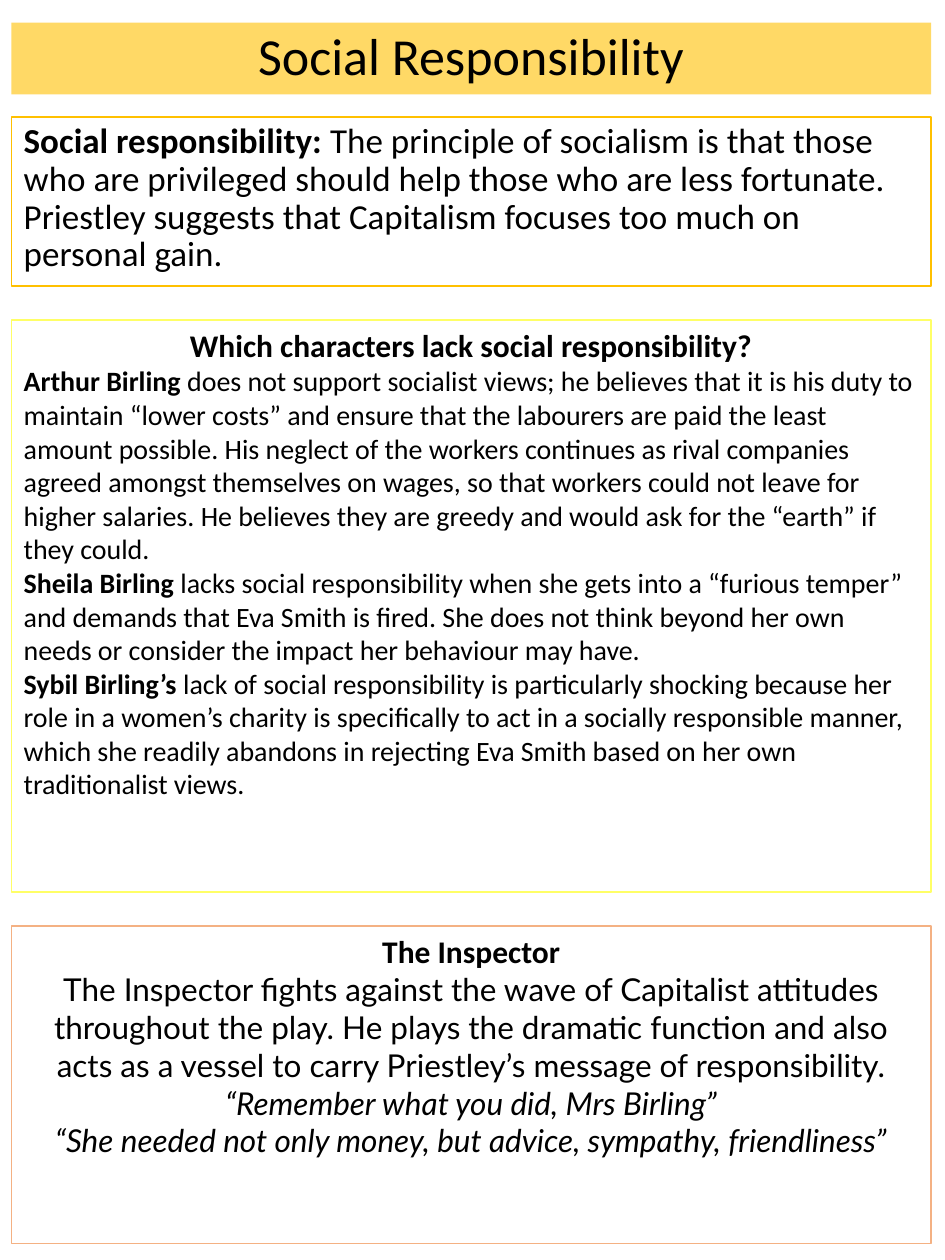
import pptx
import pptx.util
import pptx.dml.color
import pptx.enum.text

Inches, Pt = pptx.util.Inches, pptx.util.Pt
RGB = pptx.dml.color.RGBColor.from_string
Align = pptx.enum.text.PP_ALIGN
Anchor = pptx.enum.text.MSO_ANCHOR

THEME = {
    "ink": "000000", "band": "FFD966", "font": "Calibri", "alt": "Lato",
    "title": 29.7, "lead": 20, "head": 18, "text": 16, "edge": 0.75,
}
LEFT, WIDE = 0.09, 7.3

TITLE = [("mid", "title", "font", [("Social Responsibility", "")])]

LEAD = [("left", "lead", "font", [
    ("Social responsibility: ", "b"),
    ("The principle of socialism is that those who are privileged should help those who are "
     "less fortunate. Priestley suggests that Capitalism focuses too much on personal gain.", ""),
])]

ROLES = [
    ("mid", "head", "font", [("Which characters lack social responsibility?", "b")]),
    ("left", "text", "font", [
        ("Arthur Birling ", "b"),
        ("does not support socialist views; he believes that it is his duty to maintain “lower "
         "costs” and ensure that the labourers are paid the least amount possible. His neglect "
         "of the workers continues as rival companies agreed amongst themselves on wages, so "
         "that workers could not leave for higher salaries. He believes they are greedy and "
         "would ask for the “earth” if they could.", ""),
    ]),
    ("left", "text", "font", [
        ("Sheila Birling", "b"),
        (" lacks social responsibility when she gets into a “furious temper” and demands that "
         "Eva Smith is fired. She does not think beyond her own needs or consider the impact "
         "her behaviour may have.", ""),
    ]),
    ("left", "text", "font", [
        ("Sybil Birling’s ", "b"),
        ("lack of social responsibility is particularly shocking because her role in a women’s "
         "charity is specifically to act in a socially responsible manner, which she readily "
         "abandons in rejecting Eva Smith based on her own traditionalist views.", ""),
    ]),
]

GUIDE = [
    ("mid", "head", "font", [("The Inspector", "b")]),
    ("mid", "head", "alt", [
        ("The Inspector fights against the wave of Capitalist attitudes throughout the play. He "
         "plays the dramatic function and also acts as a vessel to carry Priestley’s message of "
         "responsibility.", ""),
    ]),
    ("mid", "head", "alt", [("“Remember what you did, Mrs Birling”", "i")]),
    ("mid", "head", "alt", [
        ("“She needed not only money, but advice, sympathy, friendliness”", "i"),
    ]),
]

BOXES = [
    (0.93, 1.34, "FFC000", 0.9, 7.5, LEAD),
    (2.54, 4.54, "FFFF66", 1, 0, ROLES),
    (7.35, 2.52, "F4B183", 1, 0, GUIDE),
]


def place(shape, top, high):
    shape.left, shape.top = Inches(LEFT), Inches(top)
    shape.width, shape.height = Inches(WIDE), Inches(high)


def write(shape, paras, space, before, anchor):
    frame = shape.text_frame
    frame.word_wrap = True
    frame.auto_size = pptx.enum.text.MSO_AUTO_SIZE.NONE
    frame.vertical_anchor = anchor
    for num, (side, size, face, runs) in enumerate(paras):
        para = frame.add_paragraph() if num else frame.paragraphs[0]
        para.alignment = Align.CENTER if side == "mid" else Align.LEFT
        para.line_spacing = space
        para.space_before = Pt(before)
        for text, style in runs:
            run = para.add_run()
            run.text = text
            font = run.font
            font.name, font.size = THEME[face], Pt(THEME[size])
            font.bold, font.italic = style == "b", style == "i"
            font.color.rgb = RGB(THEME["ink"])


def main():
    deck = pptx.Presentation()
    deck.slide_width, deck.slide_height = Inches(7.5), Inches(10)
    slide = deck.slides.add_slide(deck.slide_layouts[5])

    title = slide.shapes.title
    place(title, 0.18, 0.57)
    title.fill.solid()
    title.fill.fore_color.rgb = RGB(THEME["band"])
    write(title, TITLE, 0.9, 0, Anchor.MIDDLE)

    for top, high, edge, space, before, paras in BOXES:
        box = slide.shapes.add_textbox(0, 0, 0, 0)
        place(box, top, high)
        box.line.color.rgb = RGB(edge)
        box.line.width = Pt(THEME["edge"])
        write(box, paras, space, before, Anchor.TOP)

    deck.save("out.pptx")


if __name__ == "__main__":
    main()
